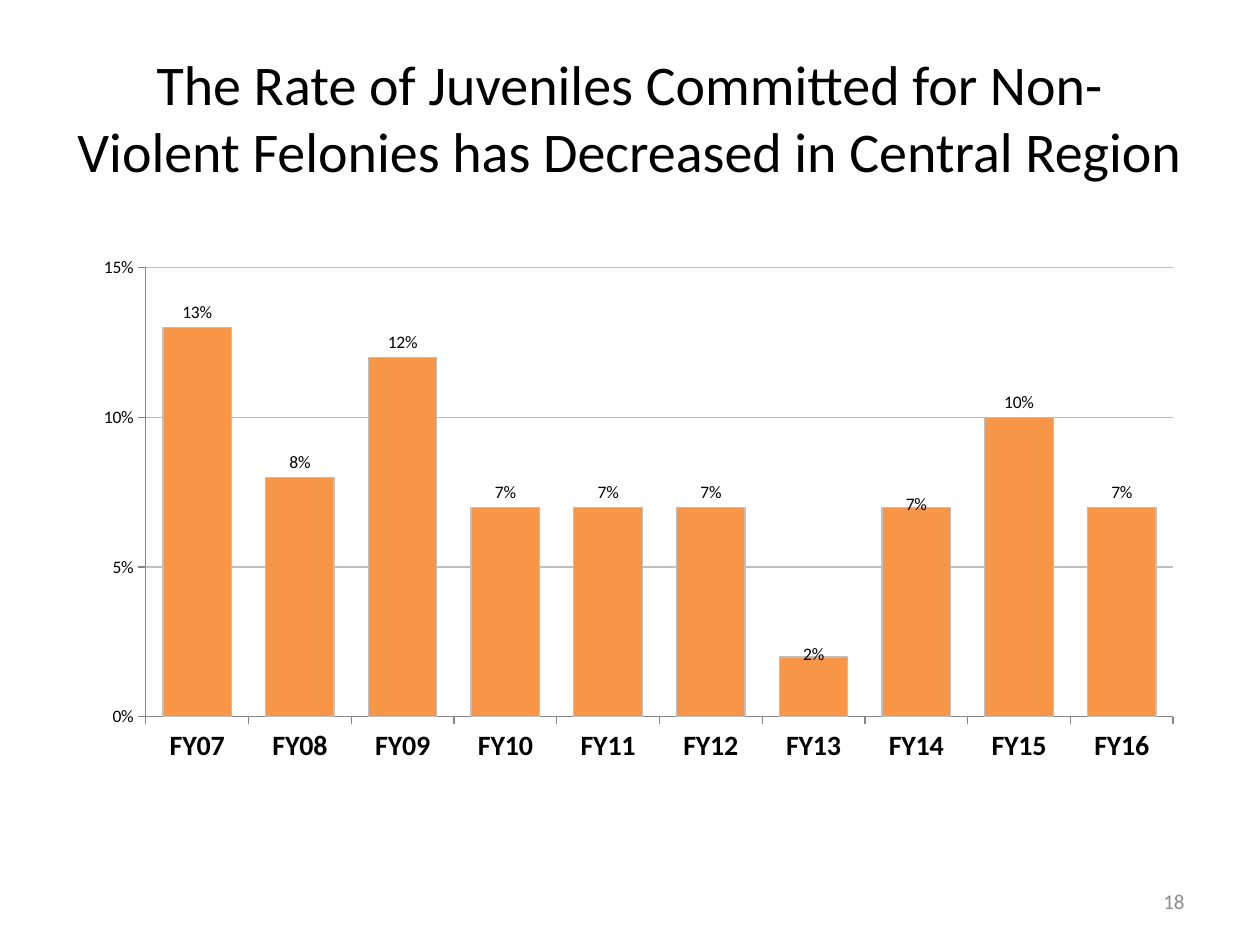
import pptx
import pptx.chart.data
import pptx.dml.color
import pptx.enum.chart
import pptx.enum.text
import pptx.oxml
import pptx.oxml.ns
import pptx.util

Inches = pptx.util.Inches
Pt = pptx.util.Pt

TEXTS = [
    {"text": "The Rate of Juveniles Committed for Non-Violent Felonies has Decreased in Central Region",
     "frame": (0.5, 0.3, 9, 1.25), "style": "title", "align": "CENTER"},
    {"text": "18", "frame": (7.17, 6.95, 2.33, 0.4), "style": "number", "align": "RIGHT"},
]
YEARS = [f"FY{year:02d}" for year in range(7, 17)]
RATES = [0.13, 0.08, 0.12, 0.07, 0.07, 0.07, 0.02, 0.07, 0.1, 0.07]
CHART_FRAME = (0.5, 1.75, 9, 4.95)
PLOT_LAYOUT = {"layoutTarget": "inner", "xMode": "edge", "yMode": "edge",
               "x": 0.073, "y": 0.076, "w": 0.906, "h": 0.72}
LOWERED_LABELS = {6: 0.02, 7: 0.02}

THEME = {
    "font": "Calibri",
    "title": {"size": 32, "color": "000000"},
    "number": {"size": 12, "color": "8C8C8C"},
    "chart": {"size": 10, "color": "000000"},
    "years": {"size": 16, "color": "000000", "bold": True},
    "bar": "F79646",
    "grid": "BFBFBF",
    "axis": "868686",
    "line": 0.75,
}


def color(value):
    return pptx.dml.color.RGBColor.from_string(value)


def set_values(target, values):
    for name, value in values.items():
        setattr(target, name, value)


def set_font(font, style):
    values = THEME[style]
    set_values(font, {"name": THEME["font"], "size": Pt(values["size"]),
                      "bold": values.get("bold", False)})
    font.color.rgb = color(values["color"])


def set_line(line, name):
    line.color.rgb = color(THEME[name])
    line.width = Pt(THEME["line"])


def make_layout(values):
    parts = "".join(f'<c:{name} val="{value}"/>' for name, value in values.items())
    return pptx.oxml.parse_xml(
        f'<c:layout {pptx.oxml.ns.nsdecls("c")}><c:manualLayout>{parts}</c:manualLayout></c:layout>')


def add_text(page, item):
    box = page.shapes.add_textbox(*map(Inches, item["frame"]))
    set_values(box.text_frame, {"word_wrap": True,
                                "vertical_anchor": pptx.enum.text.MSO_ANCHOR.MIDDLE})
    para = box.text_frame.paragraphs[0]
    para.alignment = pptx.enum.text.PP_ALIGN[item["align"]]
    span = para.add_run()
    span.text = item["text"]
    set_font(span.font, item["style"])


def add_rates(page):
    kinds = pptx.enum.chart
    data = pptx.chart.data.CategoryChartData(number_format="0%")
    data.categories = YEARS
    data.add_series("Series 1", RATES)
    chart = page.shapes.add_chart(kinds.XL_CHART_TYPE.COLUMN_CLUSTERED,
                                  *map(Inches, CHART_FRAME), data).chart
    set_values(chart, {"has_legend": False, "has_title": False})
    set_font(chart.font, "chart")

    area = chart.plots[0]
    set_values(area, {"gap_width": 50, "vary_by_categories": False, "has_data_labels": True})
    label_format = {"show_value": True, "number_format": "0%", "number_format_is_linked": False,
                    "position": kinds.XL_LABEL_POSITION.OUTSIDE_END}
    set_values(area.data_labels, label_format)
    set_font(area.data_labels.font, "chart")

    bars = area.series[0]
    bars.format.fill.solid()
    bars.format.fill.fore_color.rgb = color(THEME["bar"])
    set_line(bars.format.line, "grid")
    set_values(bars.data_labels, label_format)
    set_font(bars.data_labels.font, "chart")
    for index, drop in LOWERED_LABELS.items():
        bars.points[index].data_label.position = label_format["position"]
        label = bars.data_labels._element.xpath(f'c:dLbl[c:idx/@val="{index}"]')[0]
        label.insert(1, make_layout({"x": 0, "y": drop}))

    values = chart.value_axis
    set_values(values, {"minimum_scale": 0, "maximum_scale": 0.15, "major_unit": 0.05,
                        "has_major_gridlines": True})
    set_values(values.tick_labels, {"number_format": "0%", "number_format_is_linked": False})
    set_line(values.major_gridlines.format.line, "grid")
    for axis, style in ((values, "chart"), (chart.category_axis, "years")):
        axis.major_tick_mark = kinds.XL_TICK_MARK.OUTSIDE
        set_line(axis.format.line, "axis")
        set_font(axis.tick_labels.font, style)

    plot_area = chart._chartSpace.xpath("c:chart/c:plotArea")[0]
    for layout in plot_area.xpath("c:layout"):
        plot_area.remove(layout)
    plot_area.insert(0, make_layout(PLOT_LAYOUT))


def main():
    deck = pptx.Presentation()
    set_values(deck, {"slide_width": Inches(10), "slide_height": Inches(7.5)})
    page = deck.slides.add_slide(deck.slide_layouts[6])
    for item in TEXTS:
        add_text(page, item)
    add_rates(page)
    deck.save("out.pptx")


if __name__ == "__main__":
    main()
